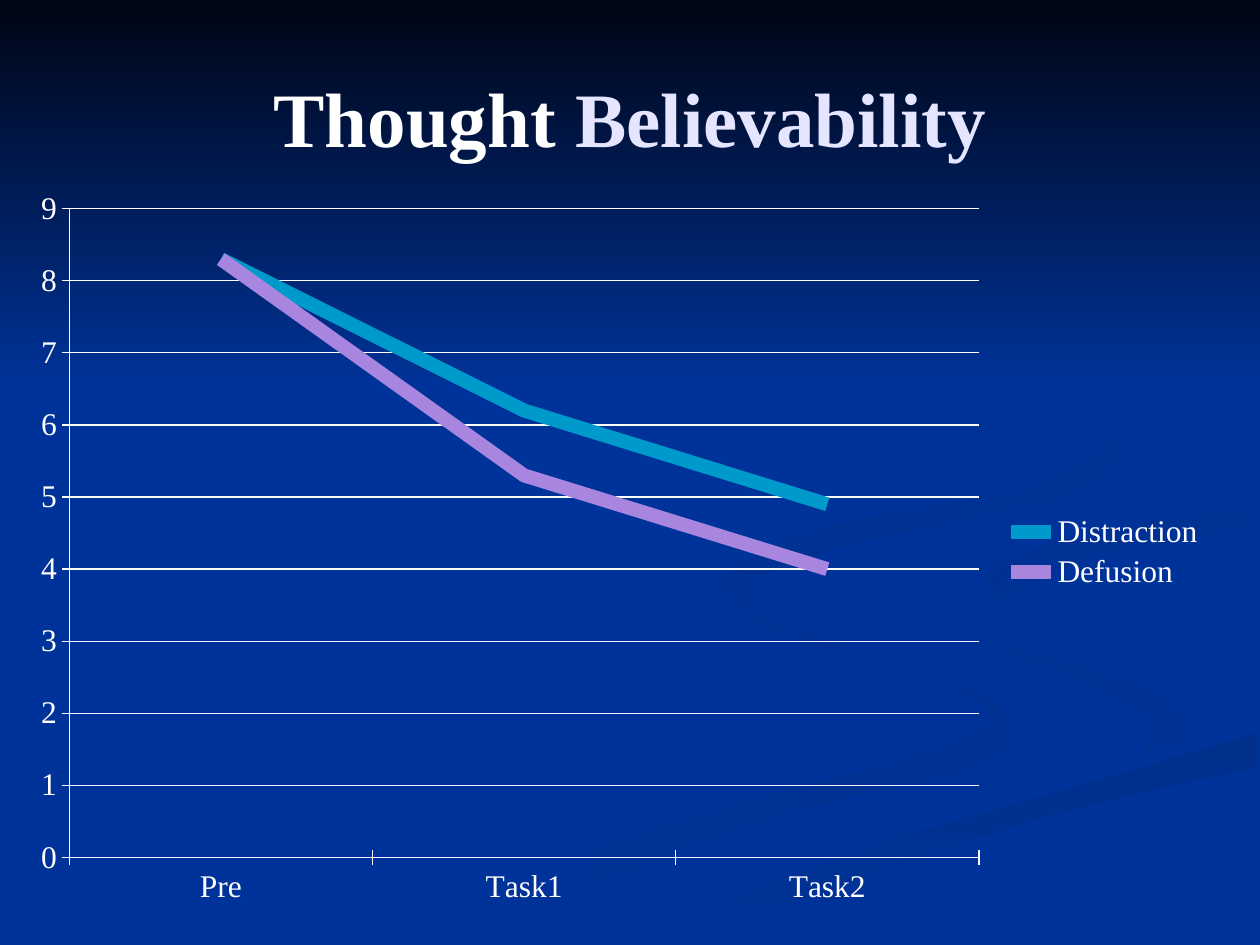
from lxml import etree
from pptx import Presentation
from pptx import util as u
from pptx.chart.data import CategoryChartData
from pptx.dml.color import RGBColor
from pptx.enum import chart as charts, text
from pptx.oxml.ns import qn

FONT = "Times New Roman"
WHITE = RGBColor(0xFF, 0xFF, 0xFF)
LAVENDER = RGBColor(0xE5, 0xE5, 0xFF)
BLUE = RGBColor(0x00, 0x33, 0x99)
NIGHT = RGBColor(0x00, 0x05, 0x14)
SHADE = RGBColor(0x00, 0x31, 0x93)
DARK_SHADE = RGBColor(0x00, 0x2F, 0x8C)
MID_SHADE = RGBColor(0x00, 0x30, 0x91)
TOP_SHADE = RGBColor(0x00, 0x2F, 0x8E)
TEAL = RGBColor(0x00, 0x99, 0xCC)
PURPLE = RGBColor(0xA8, 0x86, 0xE0)
UNIT = u.Pt(0.72)  # grid step of the ribbon outlines
STEPS = 6  # straight pieces between two ribbon points


def add_text(paragraph, words, size=44, color=WHITE, bold=True):
    run = paragraph.add_run()
    run.text = words
    run.font.name = FONT
    run.font.size = u.Pt(size)
    run.font.bold = bold
    run.font.color.rgb = color


def smooth_edge(points):
    """Catmull-Rom curve through the points, with sharp ends."""
    padded = [points[0], *points, points[-1]]
    curve = [points[0]]
    for a, b, c, d in zip(padded, padded[1:], padded[2:], padded[3:]):
        for step in range(1, STEPS + 1):
            t = step / STEPS
            curve.append(tuple(
                q + t * ((r - p) + t * ((2 * p - 5 * q + 4 * r - s)
                                        + t * (3 * q - p - 3 * r + s))) / 2
                for p, q, r, s in zip(a, b, c, d)))
    return curve


presentation = Presentation()
presentation.slide_width, presentation.slide_height = u.Pt(720), u.Pt(540)
slide = presentation.slides.add_slide(presentation.slide_layouts[5])
slide.background.fill.solid()
slide.background.fill.fore_color.rgb = BLUE

# Background ribbons: first colour, last colour, clockwise angle, edges
ribbons = [
    (BLUE, SHADE, 0, [
        [(575, 459), (594, 485), (682, 519), (781, 553), (800, 581), (769, 609),
         (594, 656), (361, 749)],
        [(300, 749), (417, 690), (579, 639), (749, 594), (785, 566), (728, 535),
         (611, 499), (570, 468)]]),
    (BLUE, SHADE, 45, [
        [(724, 464), (758, 498), (870, 530), (943, 575), (894, 605)],
        [(894, 605), (917, 576), (854, 539), (755, 505), (724, 464)]]),
    (DARK_SHADE, BLUE, 90, [
        [(503, 749), (630, 693), (831, 629), (998, 581)],
        [(998, 609), (821, 651), (649, 710), (571, 749)]]),
    (BLUE, BLUE, 0, [
        [(999, 387), (851, 411), (727, 454), (775, 503), (920, 547), (936, 587),
         (780, 634), (619, 684), (477, 749)],
        [(503, 749), (662, 681), (868, 620), (999, 581)],
        [(999, 538), (848, 503), (781, 463), (865, 424), (999, 402)]]),
    (MID_SHADE, BLUE, 45, [
        [(998, 402), (849, 427), (781, 460), (826, 496)],
        [(826, 496), (805, 472), (878, 439), (998, 420)]]),
    (TOP_SHADE, BLUE, 45, [
        [(762, 233), (864, 291), (894, 344), (855, 391), (683, 430), (594, 465),
         (622, 500)],
        [(622, 500), (577, 462), (649, 420), (818, 386), (889, 335), (846, 279),
         (762, 233)]]),
    # Night sky band across the top
    (NIGHT, BLUE, 90, [[(0, 0), (1000, 0)], [(1000, 308), (0, 308)]]),
]
group = slide.shapes.add_group_shape()
for first, last, angle, edges in ribbons:
    outline = [point for edge in edges for point in smooth_edge(edge)]
    builder = group.shapes.build_freeform(*outline[0], scale=UNIT)
    builder.add_line_segments(outline[1:], close=True)
    shape = builder.convert_to_shape()
    shape.shadow.inherit = False
    shape.line.fill.background()
    if first == last:
        shape.fill.solid()
        shape.fill.fore_color.rgb = first
        continue
    shape.fill.gradient()
    shape.fill.gradient_angle = -angle % 360
    for stop, color in zip(shape.fill.gradient_stops, (first, last)):
        stop.color.rgb = color

# Title, in front of the ribbons
title = slide.shapes.title
group._element.addnext(title._element)
title.left, title.top, title.width, title.height = map(u.Pt, (36, 21.6, 648, 90))
title.text_frame.vertical_anchor = text.MSO_ANCHOR.MIDDLE
paragraph = title.text_frame.paragraphs[0]
paragraph.alignment = text.PP_ALIGN.CENTER
add_text(paragraph, "Thought")
add_text(paragraph, " Believability", color=LAVENDER)

# Line chart
data = CategoryChartData(number_format="General")
data.categories = ["Pre", "Task1", "Task2"]
data.add_series("Distraction", (8.3, 6.2, 4.9))
data.add_series("Defusion", (8.3, 5.3, 4))
chart = slide.shapes.add_chart(
    charts.XL_CHART_TYPE.LINE, u.Pt(12.24), u.Pt(102.24), u.Pt(684), u.Pt(426.24), data
).chart
chart.has_title = False
chart.font.name = FONT
chart.font.size = u.Pt(18)
chart.font.color.rgb = WHITE
chart.has_legend = True
chart.legend.position = charts.XL_LEGEND_POSITION.RIGHT
chart.legend.include_in_layout = False

for series, color in zip(chart.plots[0].series, (TEAL, PURPLE)):
    series.smooth = False
    series.marker.style = charts.XL_MARKER_STYLE.NONE
    series.format.line.color.rgb = color
    series.format.line.width = u.Pt(8)

# Axes and gridlines
value_axis = chart.value_axis
value_axis.minimum_scale, value_axis.maximum_scale, value_axis.major_unit = 0, 9, 1
value_axis.has_major_gridlines = True
for axis in (chart.category_axis, value_axis):
    axis.major_tick_mark = charts.XL_TICK_MARK.CROSS
for part in (chart.category_axis, value_axis, value_axis.major_gridlines):
    part.format.line.color.rgb = WHITE
    part.format.line.width = u.Pt(0.75)

# Fixed plot area, as fractions of the chart
plot_area = chart._chartSpace.chart.plotArea
for old_layout in plot_area.findall(qn("c:layout")):
    plot_area.remove(old_layout)
layout = etree.Element(qn("c:layout"))
manual = etree.SubElement(layout, qn("c:manualLayout"))
for tag, value in (("layoutTarget", "inner"), ("xMode", "edge"), ("yMode", "edge"),
                   ("x", "0.04"), ("y", "0.04"), ("w", "0.76"), ("h", "0.87")):
    etree.SubElement(manual, qn(f"c:{tag}")).set("val", value)
plot_area.insert(0, layout)

presentation.save("out.pptx")
